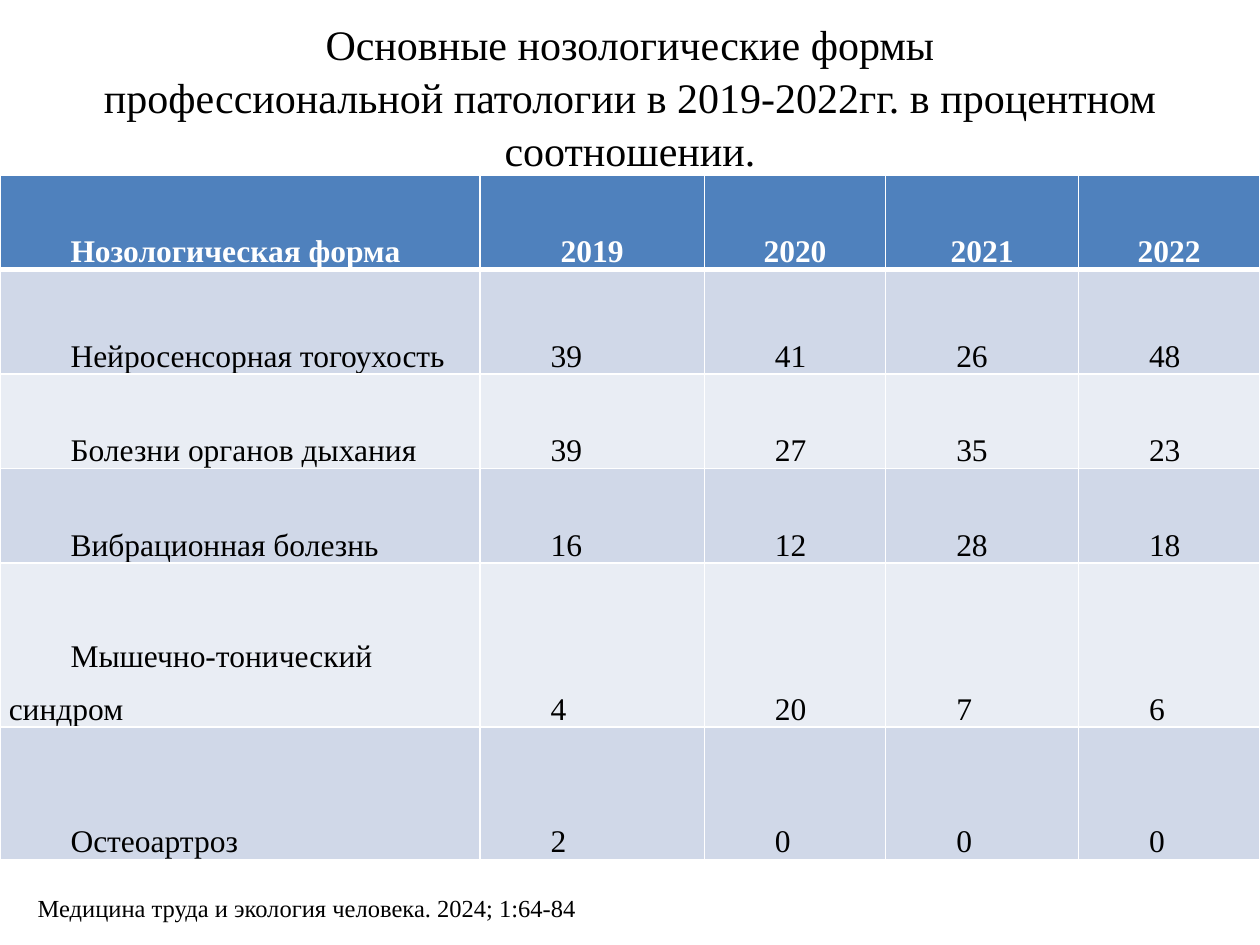
import pptx
import pptx.util
import pptx.dml.color
import pptx.enum.text
import pptx.oxml
import pptx.oxml.ns

Inches, Pt = pptx.util.Inches, pptx.util.Pt
ALIGN = pptx.enum.text.PP_ALIGN
ANCHOR = pptx.enum.text.MSO_ANCHOR
FONT = "Times New Roman"
COLORS = {"text": "000000", "head": "4F81BD", "white": "FFFFFF",
          "odd": "D0D8E8", "even": "E9EDF4"}

TITLE = ("Основные нозологические формы\v"
         "профессиональной патологии в 2019-2022гг. в процентном соотношении.")
SOURCE = "Медицина труда и экология человека. 2024; 1:64-84"
ROWS = [
    ("Нозологическая форма", 2019, 2020, 2021, 2022),
    ("Нейросенсорная тогоухость", 39, 41, 26, 48),
    ("Болезни органов дыхания", 39, 27, 35, 23),
    ("Вибрационная болезнь", 16, 12, 28, 18),
    ("Мышечно-тонический синдром", 4, 20, 7, 6),
    ("Остеоартроз", 2, 0, 0, 0),
]
WIDTHS = [3.81, 1.78, 1.44, 1.53, 1.44]
HEIGHTS = [0.75, 0.83, 0.75, 0.75, 1.3, 1.05]


def rgb(name):
    return pptx.dml.color.RGBColor.from_string(COLORS[name])


def style(para, size, color="text", align=ALIGN.LEFT, space=1.0):
    para.font.name = FONT
    para.font.size = Pt(size)
    para.font.color.rgb = rgb(color)
    para.alignment = align
    para.line_spacing = space


def add_text(slide, box, text, size, anchor, align, space):
    frame = slide.shapes.add_textbox(*map(Inches, box)).text_frame
    frame.word_wrap = True
    frame.vertical_anchor = anchor
    para = frame.paragraphs[0]
    para.text = text
    style(para, size, align=align, space=space)


def set_edges(cell, base):
    """White cell borders, with the bottom one of the given width."""
    props = cell._tc.get_or_add_tcPr()
    for spot, (side, width) in enumerate(
            [("L", 1), ("R", 1), ("T", 1), ("B", base)]):
        line = pptx.oxml.parse_xml(
            f'<a:ln{side} {pptx.oxml.ns.nsdecls("a")} w="{Pt(width)}">'
            f'<a:solidFill><a:srgbClr val="{COLORS["white"]}"/></a:solidFill>'
            f'</a:ln{side}>')
        props.insert(spot, line)


def fill_cell(cell, value, row, col):
    head = row == 0
    cell.fill.solid()
    cell.fill.fore_color.rgb = rgb("head" if head else "odd" if row % 2 else "even")
    set_edges(cell, 3 if head else 1)
    cell.vertical_anchor = ANCHOR.BOTTOM
    cell.margin_left = cell.margin_right = Inches(0.07)
    cell.margin_top = cell.margin_bottom = 0
    para = cell.text_frame.paragraphs[0]
    para.text = str(value)
    middle = head and col > 0
    style(para, 18, "white" if head else "text",
          ALIGN.CENTER if middle else ALIGN.JUSTIFY, 1.5)
    para.font.bold = head
    if not middle:
        para._p.get_or_add_pPr().set("indent", str(Inches(0.49)))


def add_grid(slide, left, top):
    table = slide.shapes.add_table(
        len(ROWS), len(WIDTHS), Inches(left), Inches(top),
        Inches(sum(WIDTHS)), Inches(sum(HEIGHTS))).table
    for col, width in zip(table.columns, WIDTHS):
        col.width = Inches(width)
    for row, height in zip(table.rows, HEIGHTS):
        row.height = Inches(height)
    for r, values in enumerate(ROWS):
        for c, value in enumerate(values):
            fill_cell(table.cell(r, c), value, r, c)


def main():
    deck = pptx.Presentation()
    deck.slide_width, deck.slide_height = Inches(10), Inches(7.5)
    slide = deck.slides.add_slide(deck.slide_layouts[6])
    # Title
    add_text(slide, (0.5, 0.13, 9, 1.25), TITLE, 24,
             ANCHOR.MIDDLE, ALIGN.CENTER, 1.05)
    # Table of shares by year
    add_grid(slide, 0, 1.39)
    # Source line
    add_text(slide, (0.2, 7.02, 7.17, 0.48), SOURCE, 14,
             ANCHOR.TOP, ALIGN.LEFT, 1.07)
    deck.save("out.pptx")


if __name__ == "__main__":
    main()
